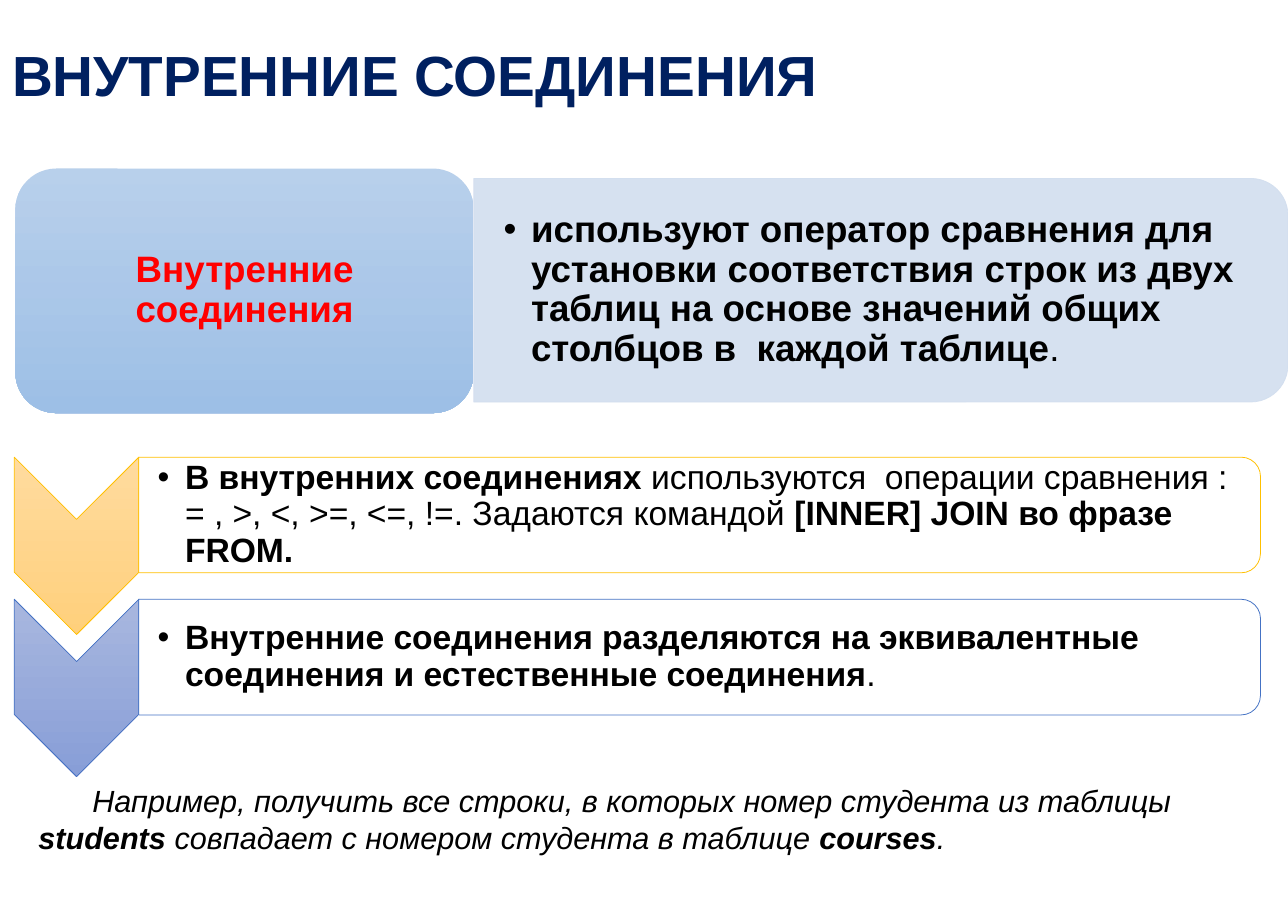
from lxml.etree import SubElement
from pptx import Presentation
from pptx.dml.color import RGBColor
from pptx.enum.shapes import MSO_SHAPE
from pptx.enum.text import MSO_ANCHOR, PP_ALIGN
from pptx.oxml.ns import qn
from pptx.util import Pt

TITLE = [("ВНУТРЕННИЕ СОЕДИНЕНИЯ", "b")]
TERM = [("Внутренние соединения", "b")]
SENSE = [
    ("используют оператор сравнения для установки соответствия строк из двух "
     "таблиц на основе значений общих столбцов в  каждой таблице", "b"),
    (".", ""),
]
STEPS = [
    [("В внутренних соединениях", "b"),
     (" используются  операции сравнения :  = , >, <, >=, <=, !=. Задаются командой ", ""),
     ("[INNER] JOIN во фразе FROM.", "b")],
    [("Внутренние соединения разделяются на эквивалентные соединения "
      "и естественные соединения", "b"),
     (".", "")],
]
SAMPLE = [
    ("Например, получить все строки, в которых номер студента из таблицы ", "i"),
    ("students ", "bi"),
    ("совпадает с номером студента в таблице ", "i"),
    ("courses", "bi"),
    (".", "i"),
]
THEME = {
    "font": "Arial",
    "title": 37, "large": 24, "body": 22, "note": 20,
    "navy": "002060", "red": "FF0000", "black": "000000", "white": "FFFFFF",
    "pale": "D2DEEF",
    "blue": ("B1CBE9", "93B9E4"),
    "steps": [("FFC000", ("FFDB9E", "FFD07C")), ("4472C4", ("A8B7DF", "889ED7"))],
}
PX = 9144

deck = Presentation()
deck.slide_width, deck.slide_height = 1169 * PX, 827 * PX
slide = deck.slides.add_slide(deck.slide_layouts[6])


def color(key):
    return RGBColor.from_string(THEME.get(key, key))


def add_text(runs, box, size="body", ink="black", pad=(10, 5, 10, 5),
             space=0.9, align=PP_ALIGN.LEFT, bullet=False, first=0):
    frame = slide.shapes.add_textbox(*[n * PX for n in box]).text_frame
    frame.word_wrap = True
    frame.vertical_anchor = MSO_ANCHOR.MIDDLE
    (frame.margin_left, frame.margin_top,
     frame.margin_right, frame.margin_bottom) = [n * PX for n in pad]
    para = frame.paragraphs[0]
    props = para._p.get_or_add_pPr()
    if bullet:
        props.set("marL", str(25 * PX))
        first = -25
        SubElement(props, qn("a:buFont"), typeface="Arial")
        SubElement(props, qn("a:buChar"), char="•")
    props.set("indent", str(first * PX))
    para.alignment = align
    para.line_spacing = space
    for words, style in runs:
        run = para.add_run()
        run.text = words
        font = run.font
        font.name = THEME["font"]
        font.size = Pt(THEME[size])
        font.color.rgb = color(ink)
        font.bold = "b" in style
        font.italic = "i" in style


def add_form(kind, box, fill, line=None, turn=False, alpha=100):
    left, top, wide, high = box
    if turn:
        left, top = left + (wide - high) / 2, top + (high - wide) / 2
        wide, high = high, wide
    form = slide.shapes.add_shape(kind, *[round(n * PX) for n in (left, top, wide, high)])
    form.shadow.inherit = False
    if turn:
        form.rotation = 90
    if isinstance(fill, tuple):
        form.fill.gradient()
        form.fill.gradient_angle = 0 if turn else 270
        for stop, tint in zip(form.fill.gradient_stops, fill):
            stop.color.rgb = color(tint)
    else:
        form.fill.solid()
        form.fill.fore_color.rgb = color(fill)
    if line:
        form.line.color.rgb = color(line)
        form.line.width = Pt(0.5)
    else:
        form.line.fill.background()
    if alpha < 100:
        for node in form._element.spPr.iter(qn("a:srgbClr")):
            SubElement(node, qn("a:alpha"), val=str(alpha * 1000))
    return form


add_text(TITLE, (0, 12, 1169, 118), size="title", ink="navy", pad=(11, 6, 11, 6))

add_form(MSO_SHAPE.ROUND_2_SAME_RECTANGLE, (430, 162, 739, 203), "pale",
         line="pale", turn=True, alpha=90)
add_text(SENSE, (430, 172, 729, 183), size="large", pad=(27, 14, 27, 14), bullet=True)
add_form(MSO_SHAPE.ROUNDED_RECTANGLE, (14, 153, 416, 222), THEME["blue"], alpha=90)
add_text(TERM, (25, 164, 394, 200), size="large", ink="red", align=PP_ALIGN.CENTER)

for row, (runs, (edge, fade)) in enumerate(zip(STEPS, THEME["steps"])):
    top = 415 + row * 129
    add_form(MSO_SHAPE.CHEVRON, (13, top, 113, 161), fade, line=edge, turn=True)
    add_form(MSO_SHAPE.ROUND_2_SAME_RECTANGLE, (126, top, 1018, 105), "white",
             line=edge, turn=True)
    add_text(runs, (126, top + 5, 1012, 95), pad=(17, 2, 2, 2), bullet=True)

add_text(SAMPLE, (25, 705, 1144, 77), size="note", space=1.0, first=49)

deck.save("out.pptx")
